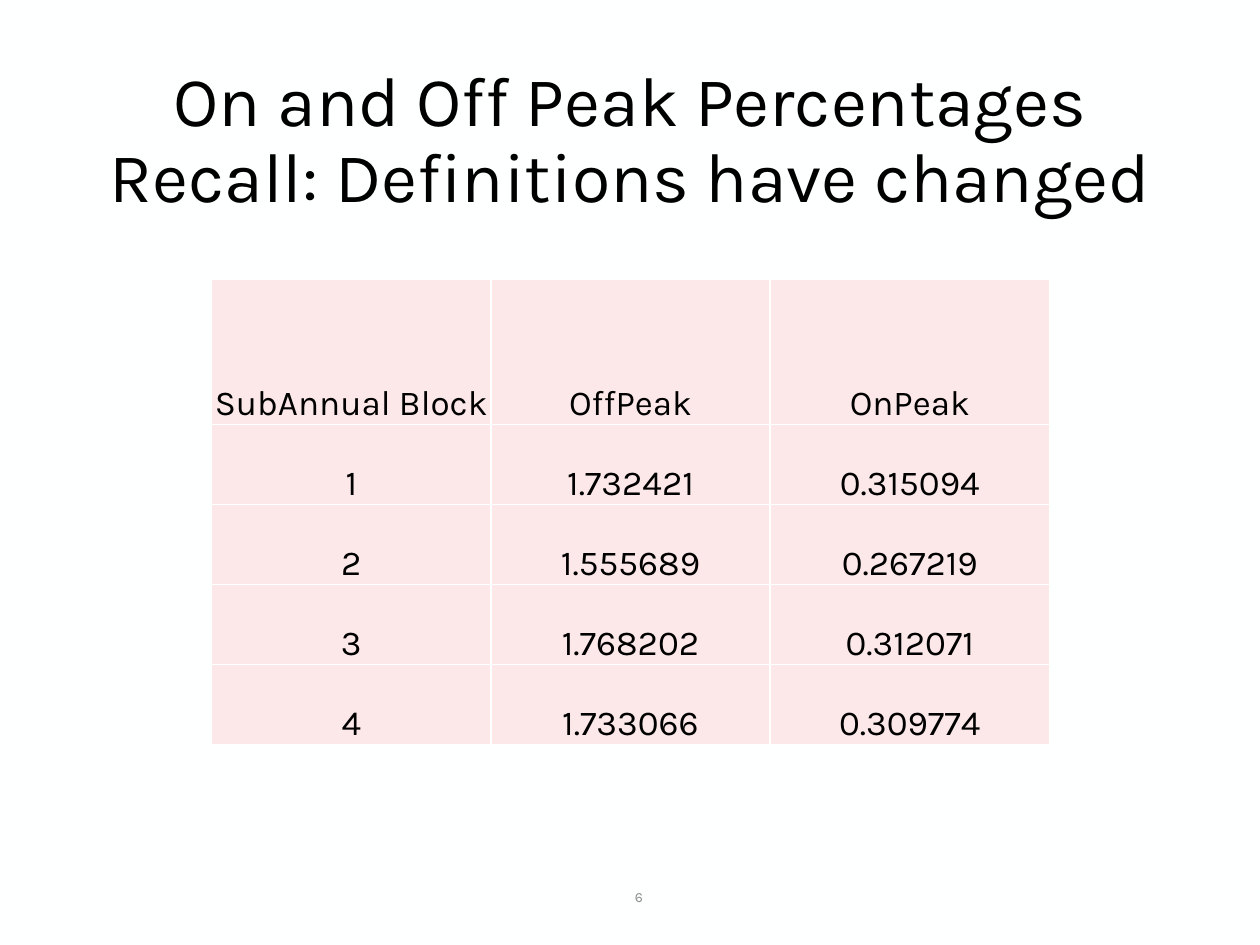
from copy import deepcopy
from dataclasses import dataclass

from lxml import etree
from pptx import Presentation
from pptx.dml.color import RGBColor
from pptx.enum.text import MSO_ANCHOR, MSO_AUTO_SIZE, PP_ALIGN
from pptx.oxml.ns import qn
from pptx.util import Inches, Pt

CENTER = PP_ALIGN.CENTER
MIDDLE, BOTTOM = MSO_ANCHOR.MIDDLE, MSO_ANCHOR.BOTTOM
NO_AUTOFIT = MSO_AUTO_SIZE.NONE
TITLE_ONLY = 5


@dataclass(frozen=True)
class Theme:
    font: str = "Karla"
    paper: str = "FEFFFF"
    ink: str = "000000"
    muted: str = "8C8C8C"
    cell: str = "FCE8E9"
    title_size: int = 40
    table_size: int = 20
    number_size: int = 8


THEME = Theme()

TITLE = "On and Off Peak Percentages\nRecall: Definitions have changed"
PEAK_ROWS = [
    ("SubAnnual Block", "OffPeak", "OnPeak"),
    ("1", "1.732421", "0.315094"),
    ("2", "1.555689", "0.267219"),
    ("3", "1.768202", "0.312071"),
    ("4", "1.733066", "0.309774"),
]


def write(frame, text, size, color=THEME.ink, align=CENTER, line_spacing=None):
    para = frame.paragraphs[0]
    para.text = text
    para.alignment = align
    if line_spacing:
        para.line_spacing = line_spacing
    for span in para.runs:
        span.font.name = THEME.font
        span.font.size = Pt(size)
        span.font.color.rgb = RGBColor.from_string(color)
    # Line breaks take the format of the text around them.
    for line_break in para._p.findall(qn("a:br")):
        line_break.append(deepcopy(para.runs[0].font._element))


def add_cell_borders(cell, color, width):
    properties = cell._tc.get_or_add_tcPr()
    for side in ("a:lnL", "a:lnR", "a:lnT", "a:lnB"):
        line = etree.SubElement(properties, qn(side), w=str(Pt(width)))
        fill = etree.SubElement(line, qn("a:solidFill"))
        etree.SubElement(fill, qn("a:srgbClr"), val=color)


def place_title(page, left, top, width, height):
    title = page.shapes.title
    title.left, title.top, title.width, title.height = left, top, width, height
    frame = title.text_frame
    frame.word_wrap = True
    frame.auto_size = NO_AUTOFIT
    frame.vertical_anchor = MIDDLE
    write(frame, TITLE, THEME.title_size, line_spacing=0.9)


def format_cell(cell, text):
    cell.margin_left = cell.margin_right = cell.margin_top = Inches(0.01)
    cell.margin_bottom = 0
    cell.vertical_anchor = BOTTOM
    add_cell_borders(cell, THEME.paper, 1)
    cell.fill.solid()
    cell.fill.fore_color.rgb = RGBColor.from_string(THEME.cell)
    write(cell.text_frame, text, THEME.table_size)


def add_peak_table(page, left, top, width, height, header_height):
    row_count, column_count = len(PEAK_ROWS), len(PEAK_ROWS[0])
    table = page.shapes.add_table(
        row_count, column_count, left, top, width, height).table
    body_height = (height - header_height) // (row_count - 1)
    for index, row in enumerate(table.rows):
        row.height = body_height if index else header_height
        for cell, text in zip(row.cells, PEAK_ROWS[index]):
            format_cell(cell, text)


def add_page_number(page, left, top, width, height):
    box = page.shapes.add_textbox(left, top, width, height)
    box.text_frame.word_wrap = True
    box.text_frame.vertical_anchor = MIDDLE
    write(box.text_frame, "6", THEME.number_size, color=THEME.muted)


def main():
    deck = Presentation()
    deck.slide_width, deck.slide_height = Inches(10), Inches(7.5)
    page = deck.slides.add_slide(deck.slide_layouts[TITLE_ONLY])
    page.background.fill.solid()
    page.background.fill.fore_color.rgb = RGBColor.from_string(THEME.paper)

    place_title(page, Inches(0.69), Inches(0.4), Inches(8.62), Inches(1.45))
    add_peak_table(page, Inches(1.68), Inches(2.22), Inches(6.65), Inches(3.69),
                   header_height=Inches(1.15))
    add_page_number(page, Inches(4.78), Inches(6.92), Inches(0.58), Inches(0.4))
    deck.save("out.pptx")


if __name__ == "__main__":
    main()
